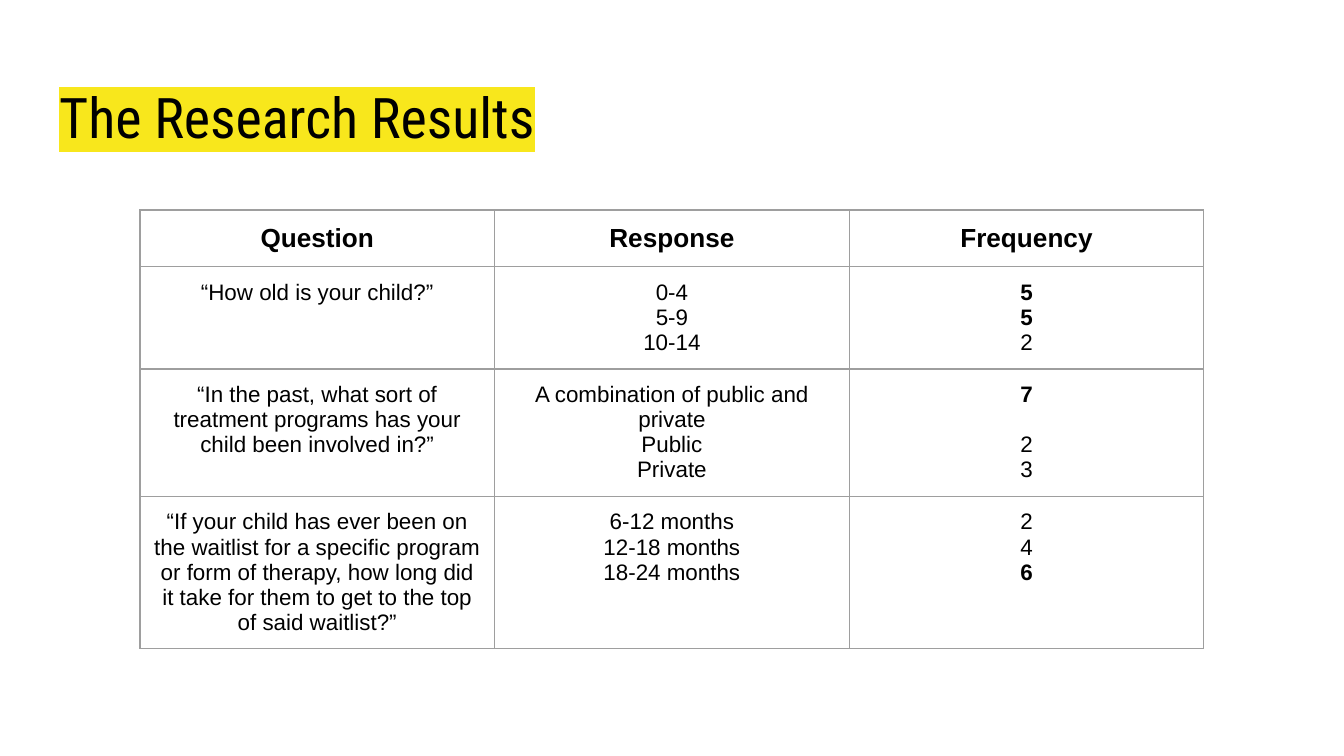
from lxml import etree
from pptx import Presentation
from pptx.dml.color import RGBColor
from pptx.enum.text import MSO_ANCHOR, MSO_AUTO_SIZE, PP_ALIGN
from pptx.oxml.ns import qn
from pptx.util import Pt

TOP, NOFIT = MSO_ANCHOR.TOP, MSO_AUTO_SIZE.NONE
LEFT, CENTER = PP_ALIGN.LEFT, PP_ALIGN.CENTER
BLACK, YELLOW, GRAY = "000000", "F8E71C", "9E9E9E"
INSET = Pt(7.2)
LINE = Pt(13.4)


def rgb(code):
    return RGBColor.from_string(code)


def style(run, **form):
    """Set font values and black colour on a run."""
    for key, value in form.items():
        setattr(run.font, key, value)
    run.font.color.rgb = rgb(BLACK)


deck = Presentation()
deck.slide_width, deck.slide_height = Pt(720), Pt(405)
slide = deck.slides.add_slide(deck.slide_layouts[5])

# Title with a highlighter band
title = slide.shapes.title
place = {"left": Pt(24.5), "top": Pt(35.3), "width": Pt(671), "height": Pt(45.4)}
for key, value in place.items():
    setattr(title, key, value)
frame = title.text_frame
box = {"margin_left": INSET, "margin_right": INSET, "margin_top": Pt(9),
       "margin_bottom": INSET, "vertical_anchor": TOP, "auto_size": NOFIT,
       "word_wrap": True}
for key, value in box.items():
    setattr(frame, key, value)
para = frame.paragraphs[0]
para.alignment = LEFT
run = para.add_run()
run.text = "The Research Results"
style(run, name="Roboto Condensed", size=Pt(30), bold=False)
mark = etree.Element(qn("a:highlight"))
etree.SubElement(mark, qn("a:srgbClr"), val=YELLOW)
run.font._element.find(qn("a:solidFill")).addnext(mark)

# Each cell is a list of lines; the top answers of each question are bold
rows = [
    (["Question"], ["Response"], ["Frequency"]),
    (["“How old is your child?”"], ["0-4", "5-9", "10-14"], ["5", "5", "2"]),
    (["“In the past, what sort of treatment programs has your child been "
      "involved in?”"],
     ["A combination of public and private", "Public", "Private"],
     ["7", "2", "3"]),
    (["“If your child has ever been on the waitlist for a specific program or "
      "form of therapy, how long did it take for them to get to the top of "
      "said waitlist?”"],
     ["6-12 months", "12-18 months", "18-24 months"], ["2", "4", "6"]),
]
heights = [30.4, 54.6, 68, 81.4]
wide = 190

grid = slide.shapes.add_table(len(rows), 3, Pt(75), Pt(112.5),
                              Pt(3 * wide), Pt(sum(heights)))
table = grid.table
table.first_row = table.horz_banding = False
for col in table.columns:
    col.width = Pt(wide)

for r, (row, high) in enumerate(zip(rows, heights)):
    table.rows[r].height = Pt(high)
    for c, lines in enumerate(row):
        cell = table.cell(r, c)
        cell.fill.background()
        cell.vertical_anchor = TOP
        for side in ("left", "right", "top", "bottom"):
            setattr(cell, f"margin_{side}", INSET)
        props = cell._tc.get_or_add_tcPr()
        for i, tag in enumerate(("a:lnL", "a:lnR", "a:lnT", "a:lnB")):
            edge = etree.Element(qn(tag), w=str(Pt(0.75)))
            fill = etree.SubElement(edge, qn("a:solidFill"))
            etree.SubElement(fill, qn("a:srgbClr"), val=GRAY)
            props.insert(i, edge)

        best = max(lines, key=int) if r and c == 2 else None
        for n, line in enumerate(lines):
            text = cell.text_frame
            para = text.add_paragraph() if n else text.paragraphs[0]
            para.alignment = CENTER
            run = para.add_run()
            run.text = line
            style(run, name="Arial", size=Pt(12 if r else 14),
                  bold=r == 0 or line == best)

# The first answer of the second question wraps, so its next count drops a line
table.cell(2, 2).text_frame.paragraphs[1].space_before = LINE

deck.save("out.pptx")
